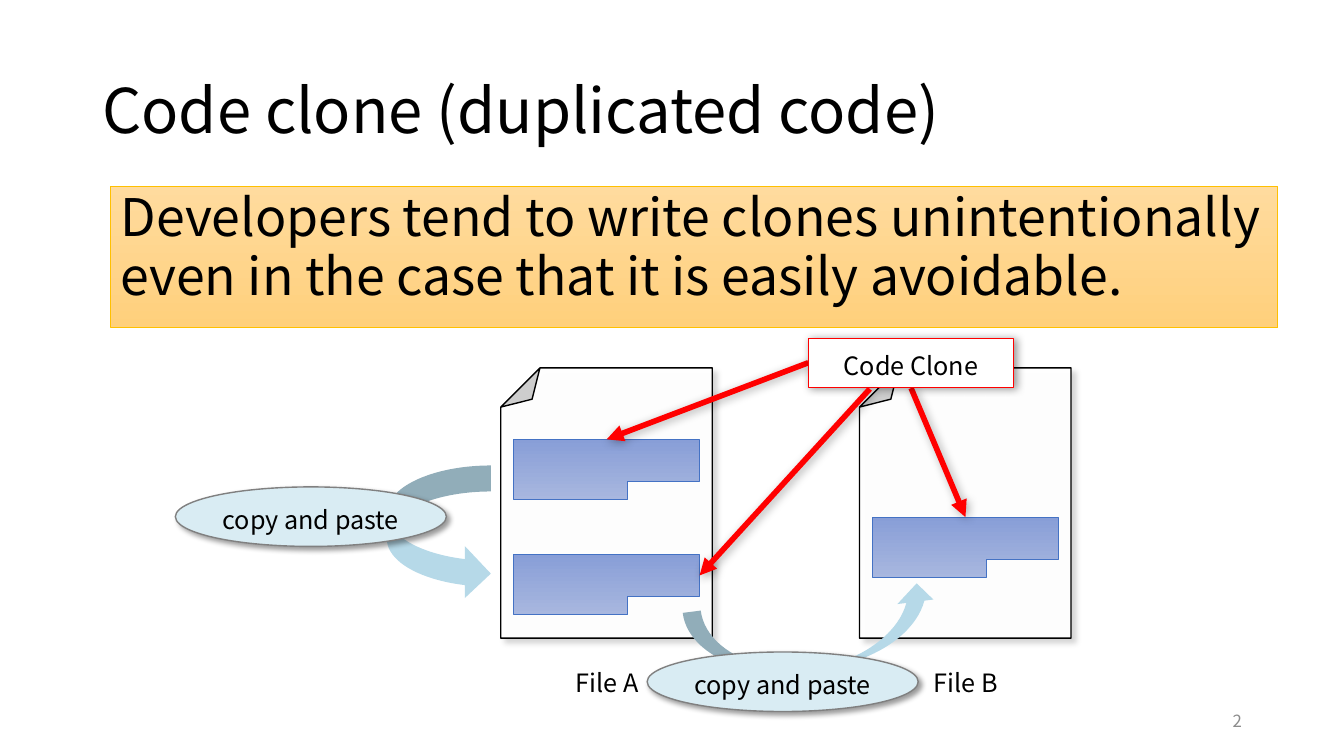
from lxml import etree
from pptx import Presentation
from pptx.dml.color import RGBColor
from pptx.enum.shapes import MSO_CONNECTOR, MSO_SHAPE
from pptx.enum.text import MSO_ANCHOR, MSO_AUTO_SIZE, PP_ALIGN
from pptx.oxml.ns import qn
from pptx.util import Cm, Pt

RECT, OVAL = MSO_SHAPE.RECTANGLE, MSO_SHAPE.OVAL
PAGE, CORNER = MSO_SHAPE.FOLDED_CORNER, MSO_SHAPE.CORNER
CURVE = MSO_SHAPE.CURVED_RIGHT_ARROW
STRAIGHT = MSO_CONNECTOR.STRAIGHT
TOP, MIDDLE = MSO_ANCHOR.TOP, MSO_ANCHOR.MIDDLE
LEFT, CENTER, RIGHT = PP_ALIGN.LEFT, PP_ALIGN.CENTER, PP_ALIGN.RIGHT
FIXED = MSO_AUTO_SIZE.NONE


def color(code):
    return RGBColor.from_string(code)


def put(frame, text, size=18, ink="000000", font="Noto Sans CJK JP", align=CENTER,
        anchor=TOP, wrap=True, space=None, before=0, base=0.13):
    frame.auto_size = FIXED
    frame.word_wrap = wrap
    frame.vertical_anchor = anchor
    frame.margin_left = frame.margin_right = Cm(0.25)
    frame.margin_top, frame.margin_bottom = Cm(0.13), Cm(base)
    for i, line in enumerate(text.split("\n")):
        para = frame.add_paragraph() if i else frame.paragraphs[0]
        para.alignment = align
        para.line_spacing = space
        para.space_before = Pt(before)
        run = para.add_run()
        run.text = line
        run.font.name = font
        run.font.size = Pt(size)
        run.font.color.rgb = color(ink)


def shade(props, alpha, blur, dist, angle):
    effects = props.find(qn("a:effectLst"))
    if effects is None:
        effects = etree.SubElement(props, qn("a:effectLst"))
    outer = etree.SubElement(effects, qn("a:outerShdw"), blurRad=str(Pt(blur)),
                             dist=str(Pt(dist)), dir=str(angle * 60000),
                             algn="tl", rotWithShape="0")
    black = etree.SubElement(outer, qn("a:srgbClr"), val="000000")
    etree.SubElement(black, qn("a:alpha"), val=str(alpha * 1000))


def adapt(props, **guides):
    values = props.find(qn("a:prstGeom")).find(qn("a:avLst"))
    for guide in list(values):
        values.remove(guide)
    for name, value in guides.items():
        etree.SubElement(values, qn("a:gd"), name=name, fmla=f"val {value}")


class Deck:
    def __init__(self):
        self.show = Presentation()
        self.show.slide_width, self.show.slide_height = Cm(33.87), Cm(19.05)
        self.slide = self.show.slides.add_slide(self.show.slide_layouts[5])
        self.shapes = self.slide.shapes

    def title(self, box, text):
        head = self.shapes.title
        head.left, head.top, head.width, head.height = map(Cm, box)
        put(head.text_frame, text, size=44, align=LEFT, anchor=MIDDLE, space=0.9)

    def text(self, box, text, **style):
        put(self.shapes.add_textbox(*map(Cm, box)).text_frame, text, **style)

    def shape(self, kind, box, fill, line=None, width=1, shadow=None, turn=0):
        item = self.shapes.add_shape(kind, *map(Cm, box))
        item.rotation = turn
        if isinstance(fill, tuple):
            item.fill.gradient()
            item.fill.gradient_angle = 270
            for stop, code in zip(item.fill.gradient_stops, fill):
                stop.color.rgb = color(code)
        else:
            item.fill.solid()
            item.fill.fore_color.rgb = color(fill)
        if line:
            item.line.color.rgb = color(line)
            item.line.width = Pt(width)
        else:
            item.line.fill.background()
        item.shadow.inherit = False
        if shadow:
            shade(item.element.spPr, *shadow)
        return item

    def page(self, left):
        sheet = self.shape(PAGE, (left, 9.27, 5.33, 6.81), "FFFFFF", "000000",
                           shadow=(17, 4, 4, 45), turn=180)
        props = sheet.element.spPr
        adapt(props, adj=18500)
        tone = props.find(qn("a:solidFill"))[0]
        etree.SubElement(tone, qn("a:alpha"), val="97000")

    def clone(self, left, top):
        block = self.shape(CORNER, (left, top, 4.67, 1.52), ("A8B7DF", "889ED7"),
                           "4472C4", 0.5)
        props = block.element.spPr
        adapt(props, adj1=70200, adj2=188900)
        props.find(qn("a:xfrm")).set("flipV", "1")

    def arrow(self, *ends):
        link = self.shapes.add_connector(STRAIGHT, *map(Cm, ends))
        link.line.color.rgb = color("FF0000")
        link.line.width = Pt(4)
        props = link.element.spPr
        etree.SubElement(props.find(qn("a:ln")), qn("a:tailEnd"), type="triangle")
        shade(props, 33, 7, 2, 45)

    def paste(self, curve, turn, left, top):
        self.shape(CURVE, curve, "B6D9E8", turn=turn)
        oval = self.shape(OVAL, (left, top, 6.83, 1.5), "D9ECF3", "808080",
                          shadow=(40, 4, 3, 45))
        put(oval.text_frame, "copy and paste", anchor=MIDDLE, wrap=False, base=0)


def main():
    deck = Deck()
    deck.title((2.33, 1.02, 29.21, 3.68), "Code clone (duplicated code)")
    claim = deck.shape(RECT, (2.79, 4.7, 29.41, 3.56), ("FFDB9E", "FFD07C"), "FFC000", 0.5)
    put(claim.text_frame, "Developers tend to write clones unintentionally\n"
        "even in the case that it is easily avoidable.",
        size=37, align=LEFT, space=0.9, before=2)

    step = 9.04
    for i, name in enumerate(("File A", "File B")):
        deck.text((12.24 + i * step, 16.69, 6.12, 1.27), name)
        deck.page(12.62 + i * step)
    for i, top in ((0, 11.07), (1, 13.03), (0, 13.97)):
        deck.clone(12.95 + i * step, top)

    deck.arrow(20.37, 9.14, 15.29, 11.07)
    deck.arrow(22.96, 9.78, 24.33, 13.03)
    label = deck.shape(RECT, (20.37, 8.53, 5.18, 1.24), "FFFFFF", "FF0000",
                       shadow=(38, 6, 2, 21))
    put(label.text_frame, "Code Clone", anchor=MIDDLE, base=0)
    deck.arrow(21.92, 9.8, 17.63, 14.5)

    deck.paste((9.75, 11.73, 2.62, 3.38), 0, 4.42, 12.27)
    deck.paste((19.58, 12.75, 1.83, 6.4), 262.8, 16.31, 16.43)
    deck.text((23.93, 17.65, 7.62, 1.02), "2", size=12, ink="8C8C8C",
              align=RIGHT, anchor=MIDDLE)
    deck.show.save("out.pptx")


if __name__ == "__main__":
    main()
